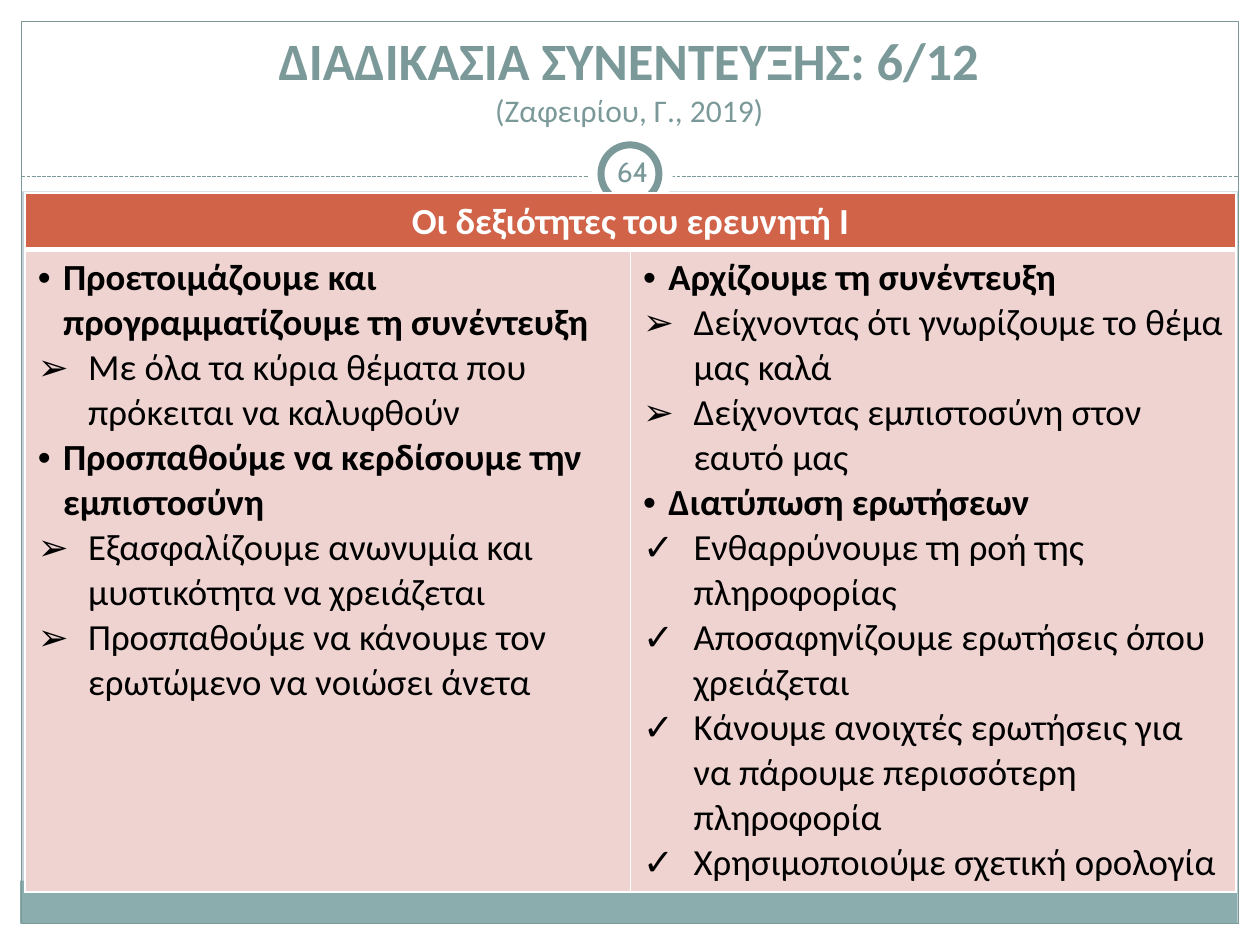
from dataclasses import dataclass
from typing import Optional

import pptx
import pptx.dml.color
import pptx.enum.dml
import pptx.enum.shapes
import pptx.enum.text
import pptx.oxml.ns
import pptx.util
from pptx.util import Inches, Pt

WHITE, TEAL, BAND = "FFFFFF", "7C999A", "8CADAE"
RED, PINK, BLACK = "D16349", "EED3D0", "000000"
FONT = "Calibri"
SHAPE = pptx.enum.shapes.MSO_SHAPE
ALIGN = pptx.enum.text.PP_ALIGN
ANCHOR = pptx.enum.text.MSO_ANCHOR
WIDTH, ROWS = 9.61, (0.45, 5.1)


@dataclass
class Form:
    kind: int
    box: tuple
    fill: Optional[str] = WHITE
    line: Optional[str] = None
    width: float = 0.75


@dataclass
class Item:
    mark: str
    text: str

    @property
    def head(self) -> bool:
        return self.mark == "•"


BACK = [
    Form(SHAPE.RECTANGLE, (0, 7.33, 10, 0.17)),
    Form(SHAPE.RECTANGLE, (0, 0, 10, 1.52)),
    Form(SHAPE.RECTANGLE, (0, 0, 0.17, 7.5)),
    Form(SHAPE.RECTANGLE, (9.83, 0, 0.17, 7.5)),
    Form(SHAPE.RECTANGLE, (0.16, 6.99, 9.66, 0.34), BAND),
    Form(SHAPE.RECTANGLE, (0.17, 0.17, 9.66, 7.16), None, TEAL),
]
BADGE = [
    Form(SHAPE.OVAL, (4.67, 1.05, 0.67, 0.67)),
    Form(SHAPE.OVAL, (4.77, 1.15, 0.46, 0.46), WHITE, TEAL, 4),
]
LEFT = [
    Item("•", "Προετοιμάζουμε και προγραμματίζουμε τη συνέντευξη"),
    Item("➢", "Με όλα τα κύρια θέματα που πρόκειται να καλυφθούν"),
    Item("•", "Προσπαθούμε να κερδίσουμε την εμπιστοσύνη"),
    Item("➢", "Εξασφαλίζουμε ανωνυμία και μυστικότητα να χρειάζεται"),
    Item("➢", "Προσπαθούμε να κάνουμε τον ερωτώμενο να νοιώσει άνετα"),
]
RIGHT = [
    Item("•", "Αρχίζουμε τη συνέντευξη"),
    Item("➢", "Δείχνοντας ότι γνωρίζουμε το θέμα μας καλά"),
    Item("➢", "Δείχνοντας εμπιστοσύνη στον εαυτό μας"),
    Item("•", "Διατύπωση ερωτήσεων"),
    Item("✓", "Ενθαρρύνουμε τη ροή της πληροφορίας"),
    Item("✓", "Αποσαφηνίζουμε ερωτήσεις όπου χρειάζεται"),
    Item("✓", "Κάνουμε ανοιχτές ερωτήσεις για να πάρουμε περισσότερη πληροφορία"),
    Item("✓", "Χρησιμοποιούμε σχετική ορολογία"),
]


def paint(fmt, color: str) -> None:
    """Give a fill a solid colour."""
    fmt.solid()
    fmt.fore_color.rgb = pptx.dml.color.RGBColor.from_string(color)


def node(parent, tag: str, **attrs):
    """Append an XML element and return it."""
    name = pptx.oxml.ns.qn(tag)
    child = parent.makeelement(name, {k: str(v) for k, v in attrs.items()})
    parent.append(child)
    return child


def draw(slide, form: Form) -> None:
    shape = slide.shapes.add_shape(form.kind, *map(Inches, form.box))
    shape.shadow.inherit = False
    if form.fill:
        paint(shape.fill, form.fill)
    else:
        shape.fill.background()
    if form.line:
        paint(shape.line.fill, form.line)
        shape.line.width = Pt(form.width)
    else:
        shape.line.fill.background()


def rule(slide, left: float, right: float, top: float) -> None:
    """Draw the dashed line below the title."""
    line = slide.shapes.add_connector(
        pptx.enum.shapes.MSO_CONNECTOR.STRAIGHT,
        Inches(left), Inches(top), Inches(right), Inches(top))
    paint(line.line.fill, TEAL)
    line.line.width = Pt(0.75)
    line.line.dash_style = pptx.enum.dml.MSO_LINE.SQUARE_DOT
    dash = line.line._ln.find(pptx.oxml.ns.qn("a:prstDash"))
    dash.set("val", "sysDash")
    node(line._element.spPr, "a:effectLst")


def write(para, text: str, size: float, color: str,
          bold: bool = False, face: str = FONT) -> None:
    run = para.add_run()
    run.text = text
    run.font.size = Pt(size)
    run.font.name = face
    run.font.bold = bold
    paint(run.font.fill, color)


def label(slide, box: tuple, anchor, side: float = 0.1):
    """Add a centred text box and return its first paragraph."""
    frame = slide.shapes.add_textbox(*map(Inches, box)).text_frame
    frame.word_wrap = True
    frame.vertical_anchor = anchor
    frame.margin_left = frame.margin_right = Inches(side)
    frame.margin_top = frame.margin_bottom = Inches(0.05)
    para = frame.paragraphs[0]
    para.alignment = ALIGN.CENTER
    return para


def dress(cell, color: str, top: float = 1, bottom: float = 1) -> None:
    """Set a cell's white borders and its fill."""
    props = cell._tc.get_or_add_tcPr()
    for side, width in zip("LRTB", (1, 1, top, bottom)):
        edge = node(props, f"a:ln{side}", w=Pt(width))
        node(node(edge, "a:solidFill"), "a:srgbClr", val=WHITE)
    paint(cell.fill, color)


def listing(cell, items: list[Item]) -> None:
    frame = cell.text_frame
    for num, item in enumerate(items):
        para = frame.add_paragraph() if num else frame.paragraphs[0]
        depth = Inches(0.2 if item.head else 0.4)
        props = para._p.get_or_add_pPr()
        props.set("marL", str(depth))
        props.set("indent", str(-depth))
        node(props, "a:buFont", typeface="Arial")
        node(props, "a:buChar", char=item.mark)
        write(para, item.text, 21, BLACK, item.head)


def grid(slide) -> None:
    table = slide.shapes.add_table(
        2, 2, Inches(0.2), Inches(1.53),
        Inches(WIDTH), Inches(sum(ROWS))).table
    for col in table.columns:
        col.width = Inches(WIDTH / 2)
    for row, high in zip(table.rows, ROWS):
        row.height = Inches(high)
    for col, items in enumerate((LEFT, RIGHT)):
        dress(table.cell(0, col), RED, bottom=3)
        dress(table.cell(1, col), PINK, top=3)
        listing(table.cell(1, col), items)
    head = table.cell(0, 0)
    head.merge(table.cell(0, 1))
    para = head.text_frame.paragraphs[0]
    para.alignment = ALIGN.CENTER
    write(para, "Οι δεξιότητες του ερευνητή Ι", 21, WHITE, True)


def main() -> None:
    deck = pptx.Presentation()
    deck.slide_width, deck.slide_height = Inches(10), Inches(7.5)
    slide = deck.slides.add_slide(deck.slide_layouts[6])
    paint(slide.background.fill, "C5D1D7")
    for form in BACK:
        draw(slide, form)
    rule(slide, 0.17, 9.83, 1.4)
    for form in BADGE:
        draw(slide, form)
    page = label(slide, (4.77, 1.12, 0.5, 0.48), ANCHOR.MIDDLE, 0.05)
    write(page, "64", 16, "7B9899", face="Cabin")
    title = label(slide, (0.33, 0.25, 9.33, 0.82), ANCHOR.BOTTOM)
    write(title, "ΔΙΑΔΙΚΑΣΙΑ ΣΥΝΕΝΤΕΥΞΗΣ: 6/12", 30, TEAL, True)
    title.add_line_break()
    write(title, "(Ζαφειρίου, Γ., 2019)", 18, TEAL)
    grid(slide)
    deck.save("out.pptx")


if __name__ == "__main__":
    main()
